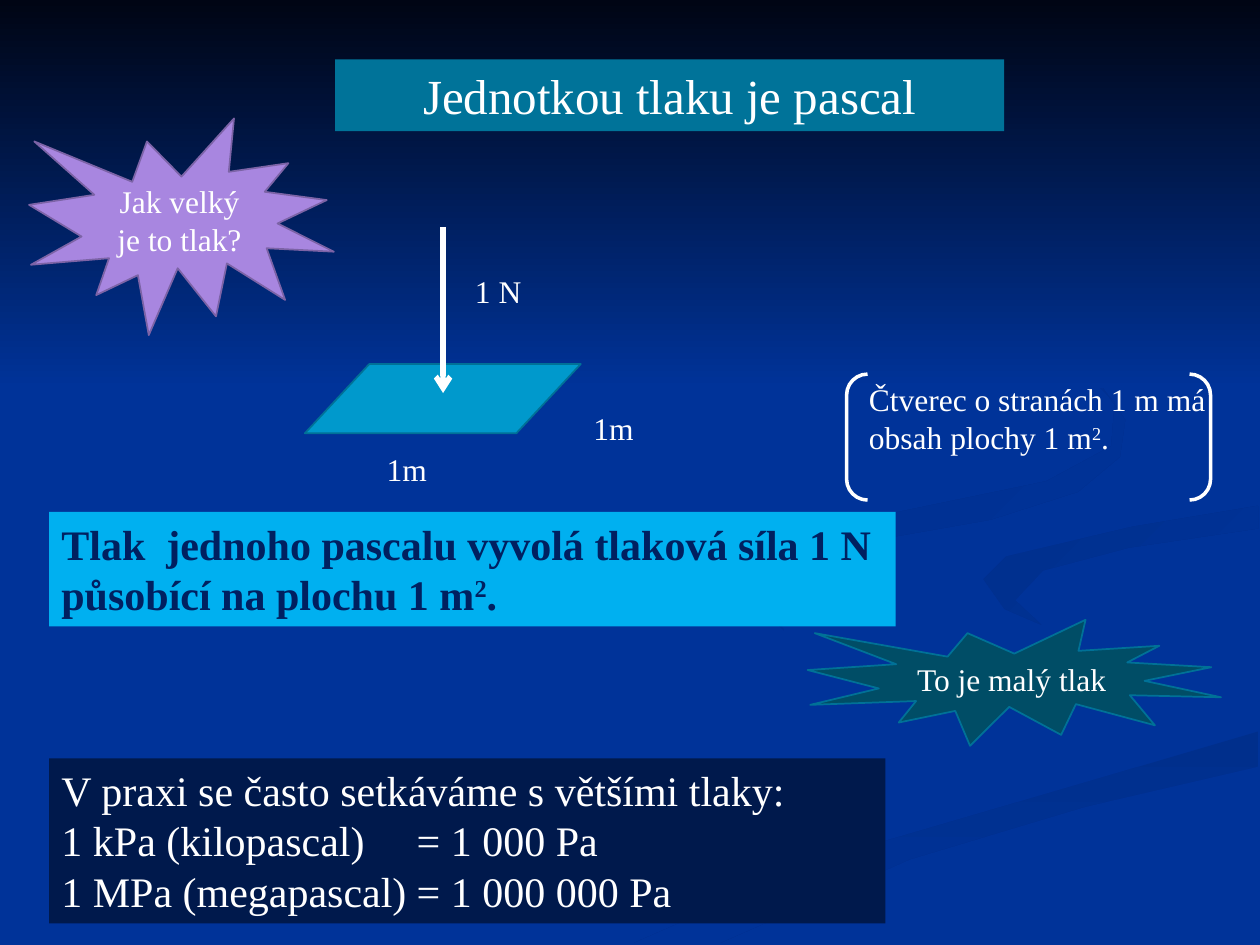
from dataclasses import dataclass

from lxml import etree
from pptx import Presentation
from pptx.dml.color import RGBColor
from pptx.enum import shapes as kinds, text as txt
from pptx.oxml import ns
from pptx.util import Pt


@dataclass(frozen=True)
class Theme:
    font: str = "Times New Roman"
    heading: int = 28
    statement: int = 24
    label: int = 18
    white: str = "FFFFFF"
    navy: str = "002060"
    ground: str = "003399"
    shade: str = "002F8C"
    night: str = "000514"
    title_fill: str = "007399"
    question: str = "A886E0"
    question_edge: str = "7C63A6"
    plate: str = "0099CC"
    answer: str = "004D66"
    teal_edge: str = "007197"
    definition: str = "00B0F0"
    practice: str = "00194C"


THEME = Theme()
SUP = "superscript"

# Background ribbons: gradient angle and outline in points
RIBBONS = [
    (90, [(362, 539), (411, 539), (520, 491), (620, 461), (719, 438),
          (719, 418), (624, 446), (501, 482), (410, 518)]),
    (45, [(562, 331), (574, 348), (595, 357), (580, 343), (596, 326), (645, 313),
          (719, 302), (719, 289), (647, 301), (575, 318)]),
    (45, [(492, 310), (566, 297), (616, 281), (640, 261), (643, 240), (622, 210),
          (549, 168), (609, 201), (637, 230), (635, 255), (598, 275), (487, 298),
          (430, 315), (415, 333), (448, 360), (427, 338), (449, 320)]),
]
BAND = [(0, 0), (0, 222), (720, 222), (720, 0)]


def rgb(color):
    return RGBColor.from_string(color)


def paint(shape, fill=None, edge=None, width=1):
    if fill:
        shape.fill.solid()
        shape.fill.fore_color.rgb = rgb(fill)
    else:
        shape.fill.background()
    if edge:
        shape.line.color.rgb = rgb(edge)
        shape.line.width = Pt(width)
    else:
        shape.line.fill.background()


def write(shape, paragraphs, size, color=THEME.white, bold=False, centred=False, middle=False):
    """Each paragraph is a list of runs; a run is a string or (string, SUP)."""
    frame = shape.text_frame
    frame.word_wrap = True
    frame.auto_size = txt.MSO_AUTO_SIZE.NONE
    frame.vertical_anchor = txt.MSO_ANCHOR.MIDDLE if middle else txt.MSO_ANCHOR.TOP
    for number, runs in enumerate(paragraphs):
        para = frame.add_paragraph() if number else frame.paragraphs[0]
        para.alignment = txt.PP_ALIGN.CENTER if centred else txt.PP_ALIGN.LEFT
        for item in runs:
            words, style = (item, None) if isinstance(item, str) else item
            run = para.add_run()
            run.text = words
            run.font.name, run.font.size, run.font.bold = THEME.font, Pt(size), bold
            run.font.color.rgb = rgb(color)
            if style == SUP:
                run.font._element.set("baseline", "30000")


def add_preset(slide, kind, box, fill=None, edge=None, width=1):
    shape = slide.shapes.add_shape(kind, *map(Pt, box))
    shape.shadow.inherit = False
    paint(shape, fill, edge, width)
    return shape


def add_label(slide, box, *runs):
    write(slide.shapes.add_textbox(*map(Pt, box)), [runs], THEME.label)


def add_burst(slide, box, words, fill, edge):
    burst = add_preset(slide, kinds.MSO_SHAPE.EXPLOSION1, box, fill, edge)
    write(burst, [[words]], THEME.label, centred=True, middle=True)


def add_panel(slide, box, paragraphs, fill, color=THEME.white, bold=False):
    panel = add_preset(slide, kinds.MSO_SHAPE.RECTANGLE, box, fill)
    write(panel, paragraphs, THEME.statement, color, bold)
    return panel


def add_gradient_outline(slide, first, angle, outline):
    builder = slide.shapes.build_freeform(*outline[0], scale=Pt(1))
    builder.add_line_segments(outline[1:], close=True)
    area = builder.convert_to_shape()
    area.shadow.inherit = False
    paint(area)
    area.fill.gradient()
    area.fill.gradient_angle = 360 - angle
    for stop, color in zip(area.fill.gradient_stops, (first, THEME.ground)):
        stop.color.rgb = rgb(color)


def add_force(slide, x, top, bottom):
    force = slide.shapes.add_connector(
        kinds.MSO_CONNECTOR.STRAIGHT, Pt(x), Pt(top), Pt(x), Pt(bottom))
    force.line.color.rgb = rgb(THEME.white)
    force.line.width = Pt(3)
    etree.SubElement(force.line._get_or_add_ln(), ns.qn("a:tailEnd"), type="arrow")
    etree.SubElement(force._element.spPr, ns.qn("a:effectLst"))


def add_tab_stop(shape, position):
    for para in shape.text_frame.paragraphs:
        stops = etree.SubElement(para._p.get_or_add_pPr(), ns.qn("a:tabLst"))
        etree.SubElement(stops, ns.qn("a:tab"), pos=str(Pt(position)), algn="l")


def main():
    deck = Presentation()
    deck.slide_width, deck.slide_height = Pt(720), Pt(540)
    slide = deck.slides.add_slide(deck.slide_layouts[5])
    slide.background.fill.solid()
    slide.background.fill.fore_color.rgb = rgb(THEME.ground)

    # Backdrop
    for angle, outline in RIBBONS:
        add_gradient_outline(slide, THEME.shade, angle, outline)
    add_gradient_outline(slide, THEME.night, 90, BAND)

    # Title, brought in front of the backdrop
    title = slide.shapes.title
    slide.shapes._spTree.append(title._element)
    title.left, title.top, title.width, title.height = map(Pt, (191.5, 34, 382.3, 41))
    paint(title, THEME.title_fill)
    write(title, [["Jednotkou tlaku je pascal"]], THEME.heading, centred=True)

    # Force of 1 N on a square metre
    add_label(slide, (213.8, 253.4, 39.6, 29), "1m")
    add_burst(slide, (16.6, 67.7, 174.2, 123.8), "Jak velký je to tlak?",
              THEME.question, THEME.question_edge)
    plate = add_preset(slide, kinds.MSO_SHAPE.PARALLELOGRAM, (174.2, 208, 157.7, 39.6),
                       THEME.plate, THEME.teal_edge)
    plate.adjustments[0] = 0.93
    add_label(slide, (332, 230.4, 50.4, 29), "1m")
    add_force(slide, 253.2, 129.6, 224.6)
    add_label(slide, (264.3, 152, 62, 29), "1 N")

    # Definition and its explanation
    add_panel(slide, (28, 292.5, 483.8, 65.5),
              [["Tlak  jednoho pascalu vyvolá tlaková síla 1 N působící na plochu 1 m",
                ("2", SUP), "."]], THEME.definition, THEME.navy, bold=True)
    add_label(slide, (489.5, 213.8, 213.8, 51),
              "Čtverec o stranách 1 m má obsah plochy 1 m", ("2", SUP), ".")

    # Larger units, with aligned equals signs
    practice = add_panel(slide, (28, 433.3, 478, 94.3),
                         [["V praxi se často setkáváme s většími tlaky:"],
                          ["1 kPa (kilopascal)\t= 1 000 Pa"],
                          ["1 MPa (megapascal)\t= 1 000 000 Pa"]], THEME.practice)
    add_tab_stop(practice, 203)

    # Bracket and answer
    add_preset(slide, kinds.MSO_SHAPE.DOUBLE_BRACKET, (483.8, 213.8, 208, 72),
               edge=THEME.white, width=2)
    add_burst(slide, (461.5, 354.2, 236.2, 72), "To je malý tlak",
              THEME.answer, THEME.teal_edge)

    deck.save("out.pptx")


if __name__ == "__main__":
    main()
